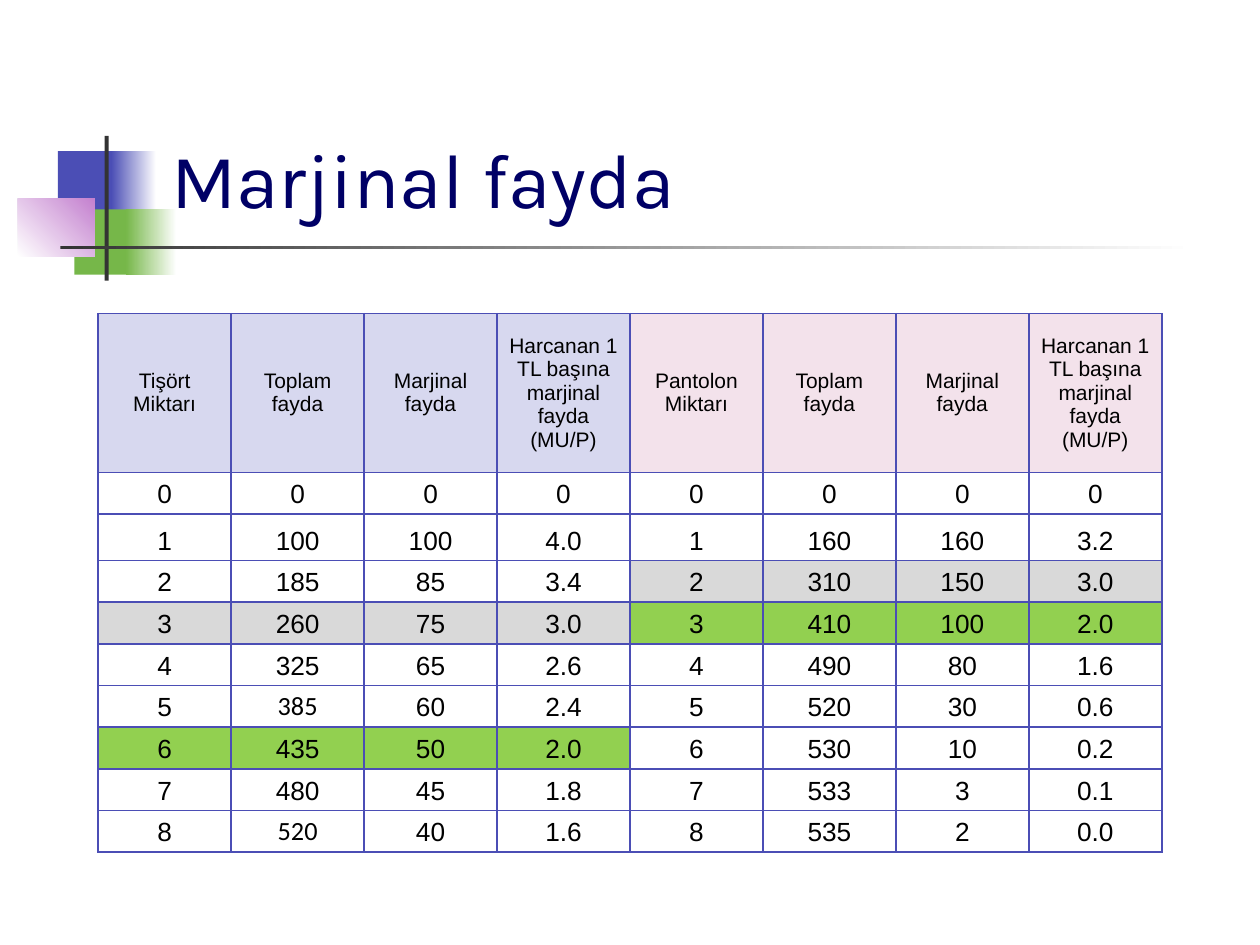
from dataclasses import dataclass
from typing import Optional

from lxml.etree import SubElement
from pptx import Presentation
from pptx.dml.color import RGBColor
from pptx.enum.shapes import MSO_SHAPE as Shape
from pptx.enum.text import MSO_ANCHOR as Anchor, PP_ALIGN as Align
from pptx.oxml.ns import qn
from pptx.util import Cm, Pt

COLORS = {
    "blue": "4B4EB5",
    "green": "76B749",
    "purple": "C481CF",
    "dark": "333333",
    "white": "FFFFFF",
    "black": "000000",
    "title": "000066",
    "shirt": "D7D8EF",
    "trousers": "F3E2EB",
    "gray": "D9D9D9",
    "lime": "92D050",
}


@dataclass(frozen=True)
class Block:
    left: float
    top: float
    width: float
    height: float
    color: str
    fade_to: Optional[str] = None
    angle: float = 0


@dataclass(frozen=True)
class Goods:
    headings: tuple
    header_fill: str
    rows: tuple
    highlights: dict


BLOCKS = (
    Block(1.17, 3.05, 1.22, 1.32, "blue"),
    Block(2.24, 3.05, 0.91, 1.32, "blue", "white"),
    Block(1.5, 4.22, 1.17, 1.32, "green"),
    Block(2.54, 4.22, 1.02, 1.32, "green", "white"),
    Block(0.36, 4.01, 1.55, 1.17, "white", "purple", 45),
    Block(2.11, 2.74, 0.08, 2.92, "dark"),
    Block(1.22, 4.95, 22.86, 0.08, "dark", "white"),
)

SHARED_HEADINGS = (
    "Toplam fayda",
    "Marjinal fayda",
    "Harcanan 1 TL başına marjinal fayda (MU/P)",
)

SHIRTS = Goods(
    ("Tişört Miktarı", *SHARED_HEADINGS),
    "shirt",
    (
        ("0", "0", "0", "0"),
        ("1", "100", "100", "4.0"),
        ("2", "185", "85", "3.4"),
        ("3", "260", "75", "3.0"),
        ("4", "325", "65", "2.6"),
        ("5", "385", "60", "2.4"),
        ("6", "435", "50", "2.0"),
        ("7", "480", "45", "1.8"),
        ("8", "520", "40", "1.6"),
    ),
    {3: "gray", 6: "lime"},
)

TROUSERS = Goods(
    ("Pantolon Miktarı", *SHARED_HEADINGS),
    "trousers",
    (
        ("0", "0", "0", "0"),
        ("1", "160", "160", "3.2"),
        ("2", "310", "150", "3.0"),
        ("3", "410", "100", "2.0"),
        ("4", "490", "80", "1.6"),
        ("5", "520", "30", "0.6"),
        ("6", "530", "10", "0.2"),
        ("7", "533", "3", "0.1"),
        ("8", "535", "2", "0.0"),
    ),
    {2: "gray", 3: "lime"},
)

CALIBRI_CELLS = {(6, 1), (9, 1)}
COLUMN_WIDTH = 2.68
ROW_HEIGHTS = (3.2, 0.84, 0.94) + (0.84,) * 7


def rgb(name: str) -> RGBColor:
    return RGBColor.from_string(COLORS[name])


def add_span(para, text: str, size: float, font: str, color: str) -> None:
    span = para.add_run()
    span.text = text
    span.font.size = Pt(size)
    span.font.name = font
    span.font.color.rgb = rgb(color)


def draw_block(page, block: Block) -> None:
    box = page.shapes.add_shape(
        Shape.RECTANGLE, Cm(block.left), Cm(block.top), Cm(block.width), Cm(block.height)
    )
    box.shadow.inherit = False
    box.line.fill.background()
    if block.fade_to is None:
        box.fill.solid()
        box.fill.fore_color.rgb = rgb(block.color)
        return
    box.fill.gradient()
    box.fill.gradient_angle = block.angle
    ends = ((0, block.color), (1, block.fade_to))
    for stop, (position, color) in zip(box.fill.gradient_stops, ends):
        stop.position = position
        stop.color.rgb = rgb(color)


def draw_title(page, text: str) -> None:
    box = page.shapes.add_textbox(Cm(3.2), Cm(0.58), Cm(21.64), Cm(4.06))
    frame = box.text_frame
    frame.word_wrap = True
    frame.vertical_anchor = Anchor.BOTTOM
    add_span(frame.paragraphs[0], text, 44, "Karla", "title")


def add_borders(cell) -> None:
    properties = cell._tc.get_or_add_tcPr()
    for side in ("a:lnL", "a:lnR", "a:lnT", "a:lnB"):
        line = SubElement(properties, qn(side), w=str(Pt(1)))
        fill = SubElement(line, qn("a:solidFill"))
        SubElement(fill, qn("a:srgbClr"), val=COLORS["blue"])


def fill_cell(cell, text: str, size: float, font: str, fill: Optional[str], anchor) -> None:
    add_borders(cell)
    if fill is None:
        cell.fill.background()
    else:
        cell.fill.solid()
        cell.fill.fore_color.rgb = rgb(fill)
    cell.margin_left = cell.margin_right = Cm(0.2)
    cell.margin_top = cell.margin_bottom = Cm(0.1)
    cell.vertical_anchor = anchor
    para = cell.text_frame.paragraphs[0]
    para.alignment = Align.CENTER
    add_span(para, text, size, font, "black")


def draw_goods(table, goods: Goods, first_column: int) -> None:
    for column, heading in enumerate(goods.headings, first_column):
        fill_cell(table.cell(0, column), heading, 12, "Arial", goods.header_fill, Anchor.MIDDLE)
    for quantity, values in enumerate(goods.rows):
        row = quantity + 1
        fill = goods.highlights.get(quantity)
        for column, value in enumerate(values, first_column):
            font = "Calibri" if (row, column) in CALIBRI_CELLS else "Arial"
            fill_cell(table.cell(row, column), value, 15, font, fill, Anchor.BOTTOM)


def draw_table(page, groups: tuple) -> None:
    column_count = sum(len(goods.headings) for goods in groups)
    table = page.shapes.add_table(
        len(ROW_HEIGHTS), column_count, Cm(1.98), Cm(6.32),
        Cm(COLUMN_WIDTH * column_count), Cm(sum(ROW_HEIGHTS)),
    ).table
    table.first_row = False
    table.horz_banding = False
    for column in table.columns:
        column.width = Cm(COLUMN_WIDTH)
    for row, height in zip(table.rows, ROW_HEIGHTS):
        row.height = Cm(height)
    first_column = 0
    for goods in groups:
        draw_goods(table, goods, first_column)
        first_column += len(goods.headings)


def main() -> None:
    deck = Presentation()
    deck.slide_width, deck.slide_height = Cm(25.4), Cm(19.05)
    page = deck.slides.add_slide(deck.slide_layouts[6])
    for block in BLOCKS:
        draw_block(page, block)
    draw_title(page, "Marjinal fayda")
    draw_table(page, (SHIRTS, TROUSERS))
    deck.save("out.pptx")


if __name__ == "__main__":
    main()
